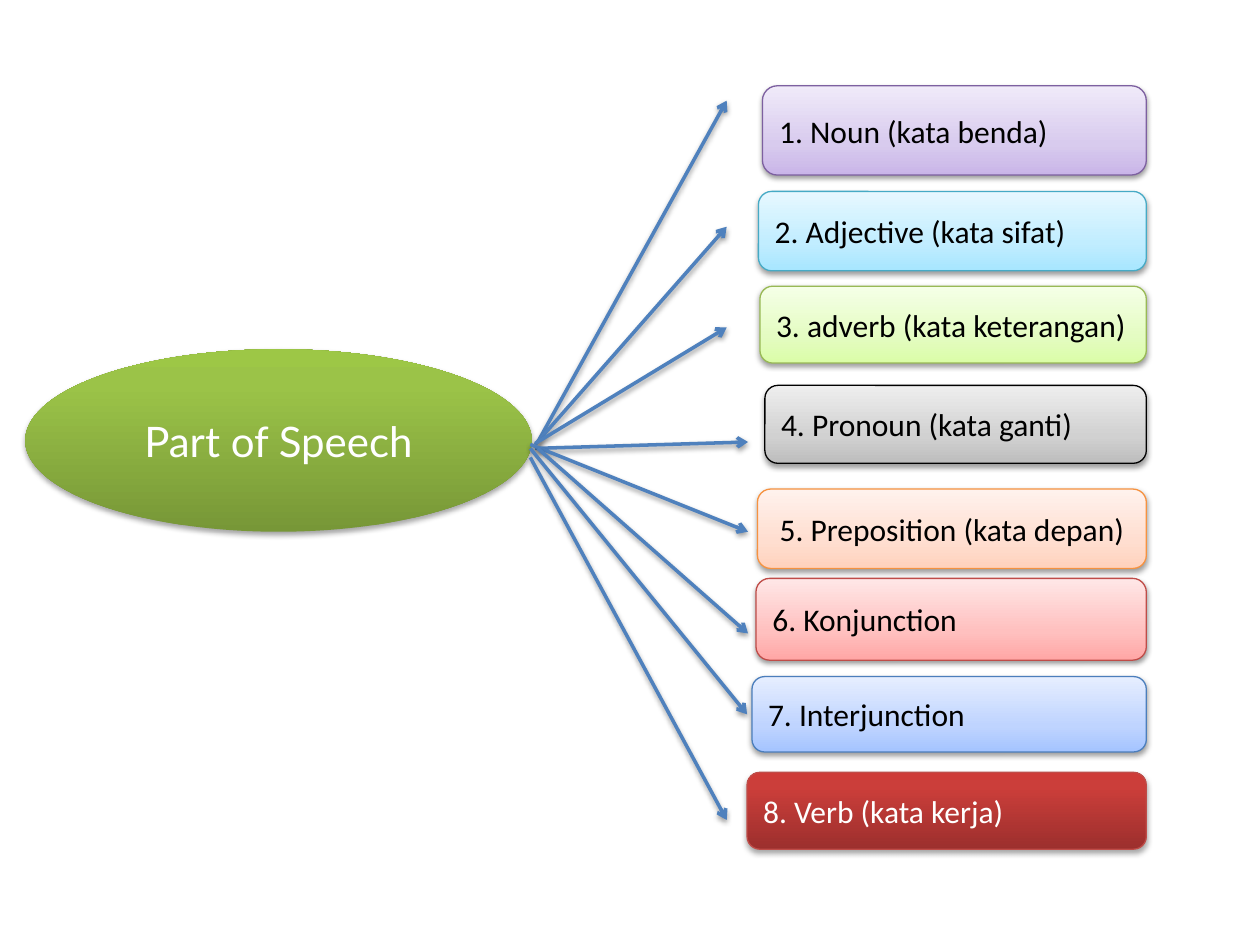
from copy import deepcopy

from lxml.etree import SubElement
from pptx import Presentation
from pptx.dml.color import RGBColor
from pptx.enum.shapes import MSO_CONNECTOR, MSO_SHAPE
from pptx.enum.text import MSO_ANCHOR, PP_ALIGN
from pptx.oxml.ns import qn
from pptx.util import Cm, Pt

# text, indent, top, height, line, gradient from bottom to top
WORDS = [
    ("1. Noun (kata benda)", 0.31, 0, 1.8, "7D60A0", "C9B5E8 D8CBEE F0EAF9"),
    ("2. Adjective (kata sifat)", 0.23, 2.13, 1.6, "46AAC5", "A7E6FF C1EDFF E7F8FF"),
    ("3. adverb (kata keterangan)", 0.26, 4.04, 1.55, "98B955", "DAFDA7 E4FCC2 F5FFE7"),
    ("4. Pronoun (kata ganti)", 0.36, 6.04, 1.57, "000000", "BDBDBD D1D1D1 EEEEEE"),
    ("5. Preposition (kata depan)", 0.21, 8.13, 1.6, "F69240", "FFD2BD FFDED0 FFF2ED"),
    ("6. Konjunction", 0.18, 9.93, 1.65, "BF4C48", "FFA6A5 FFC0BF FFE7E7"),
    ("7. Interjunction", 0.1, 11.91, 1.52, "4B7EBC", "A4C4FF BFD4FF E6EEFF"),
    ("8. Verb (kata kerja)", 0, 13.84, 1.55, "BF4C48", "9C2F2D CB3E3A CE3B37"),
]
# start x, start y, end x, end y
RAYS = [
    (0.15, 6.88, 3.96, 0),
    (0.1, 6.93, 3.96, 2.54),
    (0.1, 6.91, 3.96, 4.57),
    (0.1, 7.01, 4.39, 6.88),
    (0, 6.93, 4.39, 8.69),
    (0.15, 7.01, 4.39, 10.74),
    (0, 7.01, 4.37, 12.37),
    (0, 7.19, 3.96, 14.5),
]


def color(code):
    return RGBColor.from_string(code)


def shade(item, alpha=38, dist=1.6):
    """Soft shadow straight below; call it once the line is set."""
    effects = SubElement(item._element.spPr, qn("a:effectLst"))
    outer = SubElement(effects, qn("a:outerShdw"), blurRad=str(Pt(3.1)),
                       dist=str(Pt(dist)), dir="5400000", rotWithShape="0")
    black = SubElement(outer, qn("a:srgbClr"), val="000000")
    SubElement(black, qn("a:alpha"), val=str(alpha * 1000))


def blend(shape, codes, middle):
    """Three-stop gradient that runs from bottom to top."""
    fill = shape.fill
    fill.gradient()
    fill.gradient_angle = 90
    stops = shape._element.spPr.find(f".//{qn('a:gsLst')}")
    stops.append(deepcopy(stops[-1]))
    for stop, code, place in zip(fill.gradient_stops, codes.split(), (0, middle, 1)):
        stop.color.rgb = color(code)
        stop.position = place


def write(shape, text, size, font, ink, align):
    frame = shape.text_frame
    frame.word_wrap = True
    frame.vertical_anchor = MSO_ANCHOR.MIDDLE
    frame.text = text
    line = frame.paragraphs[0]
    line.alignment = align
    face = line.runs[0].font
    face.size, face.name = Pt(size), font
    face.color.rgb = color(ink)


def add_list(slide, left, top, width):
    for text, indent, drop, height, edge, codes in WORDS:
        box = slide.shapes.add_shape(
            MSO_SHAPE.ROUNDED_RECTANGLE, Cm(left + indent), Cm(top + drop),
            Cm(width - indent), Cm(height))
        dark = text.startswith("8")
        blend(box, codes, 0.8 if dark else 0.35)
        box.line.color.rgb = color(edge)
        box.line.width = Pt(0.75)
        shade(box, *((35, 1.8) if dark else ()))
        align = PP_ALIGN.CENTER if text.startswith("5") else PP_ALIGN.LEFT
        write(box, text, 18, "Calibri", "FFFFFF" if dark else "000000", align)


def add_hub(slide, left, top, width, height):
    hub = slide.shapes.add_shape(
        MSO_SHAPE.OVAL, Cm(left), Cm(top), Cm(width), Cm(height))
    blend(hub, "779737 9BC348 9DC746", 0.8)
    hub.line.fill.background()
    shade(hub, 35, 1.8)
    write(hub, "Part of Speech", 24, "Lato", "FFFFFF", PP_ALIGN.CENTER)


def add_rays(slide, left, top):
    for x1, y1, x2, y2 in RAYS:
        ray = slide.shapes.add_connector(
            MSO_CONNECTOR.STRAIGHT, Cm(left + x1), Cm(top + y1),
            Cm(left + x2), Cm(top + y2))
        ray.line.color.rgb = color("4F81BD")
        ray.line.width = Pt(2)
        SubElement(ray._element.spPr.find(qn("a:ln")), qn("a:tailEnd"), type="arrow")
        shade(ray)


def main():
    deck = Presentation()
    deck.slide_width, deck.slide_height = Cm(25.4), Cm(19.05)
    slide = deck.slides.add_slide(deck.slide_layouts[6])
    # Word classes on the right
    add_list(slide, 15.06, 1.73, 8.05)
    # Topic on the left
    add_hub(slide, 0.51, 7.04, 10.21, 3.68)
    # Arrows from the topic to the classes
    add_rays(slide, 10.69, 2.03)
    deck.save("out.pptx")


if __name__ == "__main__":
    main()
